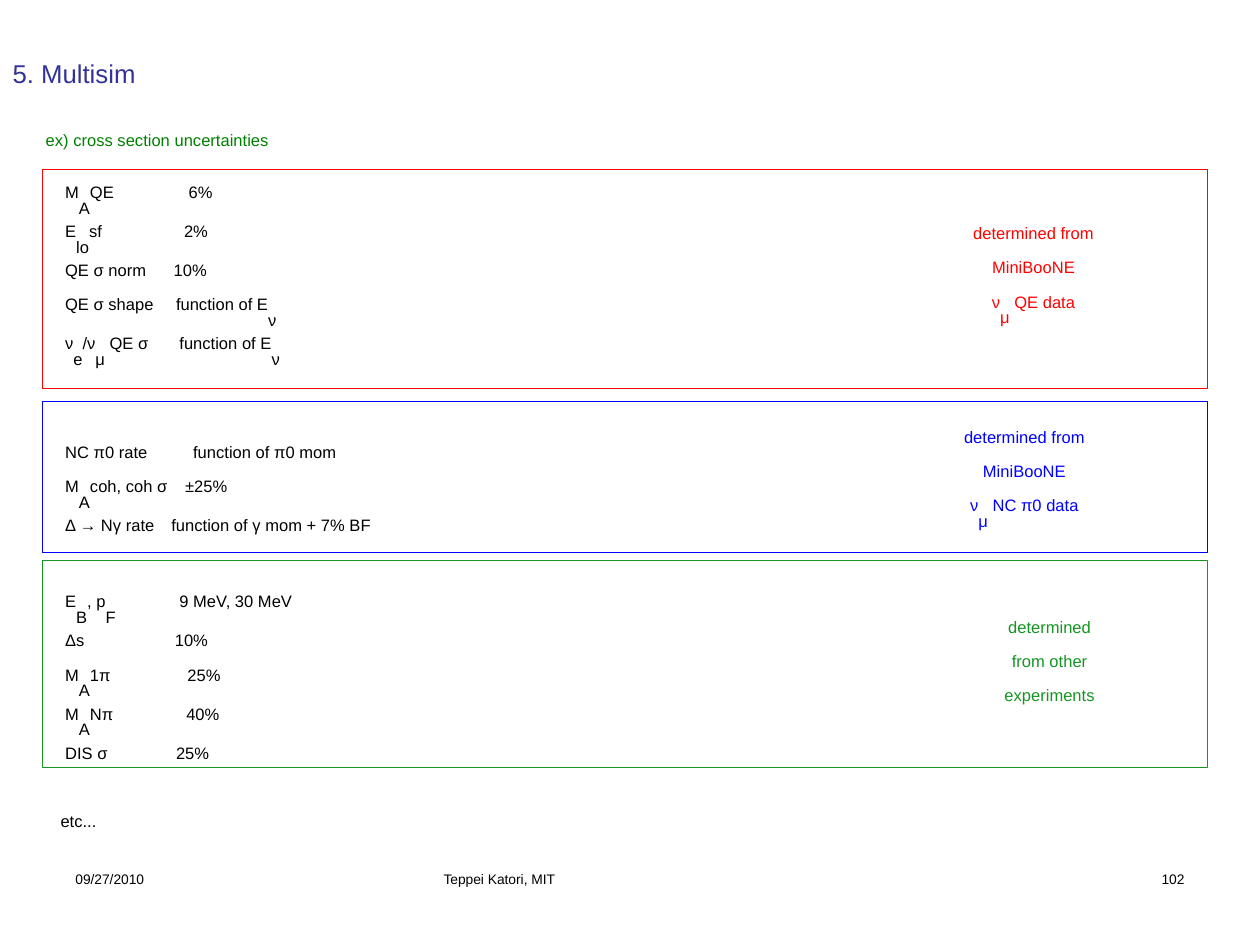
from dataclasses import dataclass

from lxml.etree import SubElement
from pptx import Presentation
from pptx.dml.color import RGBColor
from pptx.enum.shapes import MSO_SHAPE as Shape
from pptx.enum.text import MSO_ANCHOR as Anchor, MSO_AUTO_SIZE as AutoSize, PP_ALIGN as Align
from pptx.oxml.ns import qn
from pptx.util import Inches, Pt


@dataclass(frozen=True)
class Theme:
    font: str = "Arial"
    black: str = "000000"
    title: str = "333399"
    heading: str = "008000"
    red: str = "FF0000"
    blue: str = "0000FF"
    green: str = "169424"
    title_size: int = 28
    body_size: int = 18
    footer_size: int = 15
    raised: int = 30000
    lowered: int = -25000


THEME = Theme()
ROW_LEFT, ROW_WIDTH = 0.46, 7.4
FRAME_LEFT, FRAME_WIDTH = 0.37, 10.19

# Text between tildes is subscript; each row is parameter, value, value's tab stop.
GROUPS = [
    dict(color=THEME.red, frame=(1.48, 1.92), rows_top=1.5,
         rows=[("M~A~QE", "6%", 1.08),
               ("E~lo~sf", "2%", 1.04),
               ("QE σ norm", "10%", 0.95),
               ("QE σ shape", "function of E~ν~", 0.97),
               ("ν~e~/ν~μ~ QE σ", "function of E~ν~", 1.0)],
         note_box=(8.01, 1.86, 2.06, 1.02),
         note=["determined from", "MiniBooNE", "ν~μ~ QE data"]),
    dict(color=THEME.blue, frame=(3.51, 1.32), rows_top=3.77,
         rows=[("NC π0 rate", "function of π0 mom", 1.12),
               ("M~A~coh, coh σ", "±25%", 1.05),
               ("Δ → Nγ rate", "function of γ mom + 7% BF", 0.93)],
         note_box=(7.93, 3.64, 2.06, 1.02),
         note=["determined from", "MiniBooNE", "ν~μ~ NC π0 data"]),
    dict(color=THEME.green, frame=(4.9, 1.81), rows_top=5.08,
         rows=[("E~B~, p~F~", "9 MeV, 30 MeV", 1.0),
               ("Δs", "10%", 0.96),
               ("M~A~1π", "25%", 1.07),
               ("M~A~Nπ", "40%", 1.06),
               ("DIS σ", "25%", 0.97)],
         note_box=(8.38, 5.3, 1.6, 1.02),
         note=["determined", "from other", "experiments"]),
]


def set_attributes(target, values):
    for name, value in values.items():
        setattr(target, name, value)


def add_runs(p, text, size, color):
    """Write text as raised runs, with the parts between tildes lowered."""
    for i, part in enumerate(text.split("~")):
        if not part:
            continue
        r = p.add_run()
        r.text = part
        set_attributes(r.font, dict(name=THEME.font, size=Pt(size)))
        r.font.color.rgb = RGBColor.from_string(color)
        baseline = THEME.lowered if i % 2 else THEME.raised
        r._r.get_or_add_rPr().set("baseline", str(baseline))


def add_tab_stop(p, position):
    tabs = SubElement(p._p.get_or_add_pPr(), qn("a:tabLst"))
    SubElement(tabs, qn("a:tab"), pos=str(Inches(position)), algn="l")


def add_text(s, box, lines, size=THEME.body_size, color=THEME.black,
             align=Align.LEFT, anchor=Anchor.TOP, wrap=True, tab_stops=()):
    tf = s.shapes.add_textbox(*map(Inches, box)).text_frame
    set_attributes(tf, dict(
        word_wrap=wrap, vertical_anchor=anchor,
        auto_size=AutoSize.NONE if wrap else AutoSize.SHAPE_TO_FIT_TEXT,
        margin_left=Inches(0.11), margin_right=Inches(0.11),
        margin_top=Inches(0.06), margin_bottom=Inches(0.06)))
    for i, line in enumerate(lines):
        p = tf.add_paragraph() if i else tf.paragraphs[0]
        p.alignment = align
        if tab_stops:
            add_tab_stop(p, tab_stops[i])
        add_runs(p, line, size, color)


def add_frame(s, top, height, color):
    box = (FRAME_LEFT, top, FRAME_WIDTH, height)
    frame = s.shapes.add_shape(Shape.RECTANGLE, *map(Inches, box))
    frame.shadow.inherit = False
    frame.fill.background()
    frame.line.color.rgb = RGBColor.from_string(color)
    frame.line.width = Pt(0.75)


def add_group(s, color, frame, rows_top, rows, note_box, note):
    """Add a framed list of uncertainties and the note on their source."""
    top, height = frame
    add_frame(s, top, height, color)
    add_text(s, (ROW_LEFT, rows_top, ROW_WIDTH, top + height - rows_top),
             [f"{name}\t{value}" for name, value, _ in rows],
             tab_stops=[stop for _, _, stop in rows])
    add_text(s, note_box, note, color=color, align=Align.CENTER, wrap=False)


def add_footer(s):
    for left, width, text, align in [
            (0.55, 2.57, "09/27/2010", Align.LEFT),
            (3.77, 3.49, "Teppei Katori, MIT", Align.LEFT),
            (7.9, 2.57, "102", Align.RIGHT)]:
        add_text(s, (left, 7.53, width, 0.57), [text],
                 size=THEME.footer_size, align=align)


def main():
    prs = Presentation()
    set_attributes(prs, dict(slide_width=Inches(11.02), slide_height=Inches(8.27)))
    s = prs.slides.add_slide(prs.slide_layouts[6])
    add_text(s, (0, 0, 11.02, 1.38), ["5. Multisim"], size=THEME.title_size,
             color=THEME.title, anchor=Anchor.MIDDLE)
    add_text(s, (0.29, 1.05, 3.62, 0.41), ["ex) cross section uncertainties"],
             color=THEME.heading, wrap=False)
    for group in GROUPS:
        add_group(s, **group)
    add_text(s, (0.42, 7, 2, 0.41), ["etc..."])
    add_footer(s)
    prs.save("out.pptx")


if __name__ == "__main__":
    main()
